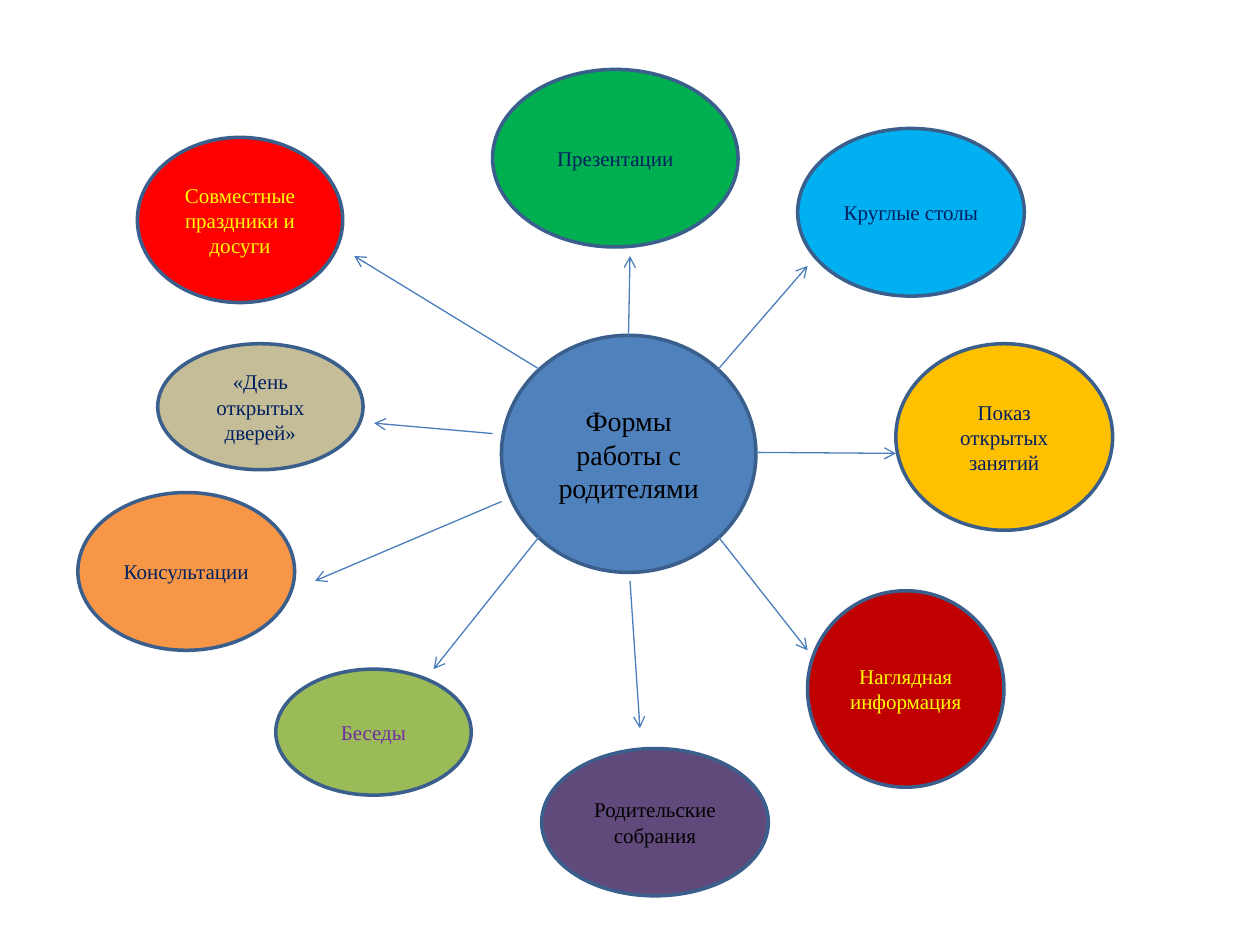
from typing import NamedTuple

from lxml.etree import SubElement
from pptx import Presentation
from pptx.dml.color import RGBColor
from pptx.enum.shapes import MSO_CONNECTOR, MSO_SHAPE
from pptx.enum.text import MSO_ANCHOR, PP_ALIGN
from pptx.oxml.ns import qn
from pptx.util import Cm, Pt

BLACK = RGBColor(0x00, 0x00, 0x00)
NAVY = RGBColor(0x00, 0x20, 0x60)
YELLOW = RGBColor(0xFF, 0xFF, 0x00)
VIOLET = RGBColor(0x70, 0x30, 0xA0)
BLUE = RGBColor(0x4F, 0x81, 0xBD)
OUTLINE = RGBColor(0x3A, 0x5F, 0x8C)
ARROW = RGBColor(0x4B, 0x7E, 0xBC)
SKY = RGBColor(0x00, 0xB0, 0xF0)
AMBER = RGBColor(0xFF, 0xC0, 0x00)
CRIMSON = RGBColor(0xC0, 0x00, 0x00)
PURPLE = RGBColor(0x60, 0x4A, 0x7B)
OLIVE = RGBColor(0x9B, 0xBB, 0x59)
ORANGE = RGBColor(0xF7, 0x96, 0x46)
RED = RGBColor(0xFF, 0x00, 0x00)
GREEN = RGBColor(0x00, 0xB0, 0x50)
TAN = RGBColor(0xC4, 0xBD, 0x97)


class Bubble(NamedTuple):
    label: str
    box: tuple[float, float, float, float]
    fill: RGBColor
    color: RGBColor = NAVY
    size: int = 12


class Spoke(NamedTuple):
    start: tuple[float, float]
    end: tuple[float, float]


HUB = Bubble("Формы работы с родителями", (10.11, 6.76, 5.13, 4.78), BLUE, BLACK, 16)

WORK_FORMS = [
    (Bubble("Презентации", (9.93, 1.4, 4.95, 3.58), GREEN),
     Spoke((12.67, 6.76), (12.7, 5.16))),
    (Bubble("Круглые столы", (16.08, 2.59, 4.57, 3.38), SKY),
     Spoke((14.48, 7.44), (16.28, 5.36))),
    (Bubble("Показ открытых занятий", (18.06, 6.93, 4.37, 3.76), AMBER),
     Spoke((15.24, 9.12), (18.06, 9.14))),
    (Bubble("Наглядная информация", (16.28, 11.91, 3.96, 3.96), CRIMSON, YELLOW),
     Spoke((14.48, 10.82), (16.28, 13.11))),
    (Bubble("Родительские собрания", (10.92, 15.09, 4.57, 2.97), PURPLE, BLACK),
     Spoke((12.7, 11.71), (12.9, 14.68))),
    (Bubble("Беседы", (5.56, 13.49, 3.94, 2.54), OLIVE, VIOLET),
     Spoke((10.87, 10.82), (8.74, 13.49))),
    (Bubble("Консультации", (1.57, 9.93, 4.37, 3.18), ORANGE),
     Spoke((10.11, 10.11), (6.35, 11.71))),
    (Bubble("«День открытых дверей»", (3.18, 6.93, 4.14, 2.54), TAN),
     Spoke((9.93, 8.74), (7.54, 8.53))),
    (Bubble("Совместные праздники и досуги", (2.77, 2.77, 4.14, 3.33), RED, YELLOW),
     Spoke((10.87, 7.44), (7.14, 5.16))),
]


def write_text(frame, text: str, *, size: int, color: RGBColor,
               font: str = "Times New Roman", align=PP_ALIGN.CENTER) -> None:
    frame.word_wrap = True
    frame.vertical_anchor = MSO_ANCHOR.MIDDLE
    paragraph = frame.paragraphs[0]
    paragraph.alignment = align
    run = paragraph.add_run()
    run.text = text
    run.font.name = font
    run.font.size = Pt(size)
    run.font.color.rgb = color


def draw_bubble(slide, bubble: Bubble) -> None:
    oval = slide.shapes.add_shape(MSO_SHAPE.OVAL, *map(Cm, bubble.box))
    oval.shadow.inherit = False
    oval.fill.solid()
    oval.fill.fore_color.rgb = bubble.fill
    oval.line.color.rgb = OUTLINE
    oval.line.width = Pt(2)
    write_text(oval.text_frame, bubble.label, size=bubble.size, color=bubble.color)


def draw_spoke(slide, spoke: Spoke) -> None:
    arrow = slide.shapes.add_connector(
        MSO_CONNECTOR.STRAIGHT, *map(Cm, spoke.start + spoke.end))
    arrow.line.color.rgb = ARROW
    arrow.line.width = Pt(0.75)
    properties = arrow.element.spPr
    SubElement(properties.find(qn("a:ln")), qn("a:tailEnd"), type="arrow")
    SubElement(properties, qn("a:effectLst"))


def main() -> None:
    deck = Presentation()
    deck.slide_width, deck.slide_height = Cm(25.4), Cm(19.05)
    slide = deck.slides.add_slide(deck.slide_layouts[6])
    draw_bubble(slide, HUB)
    for bubble, spoke in WORK_FORMS:
        draw_spoke(slide, spoke)
        draw_bubble(slide, bubble)
    deck.save("out.pptx")


if __name__ == "__main__":
    main()
